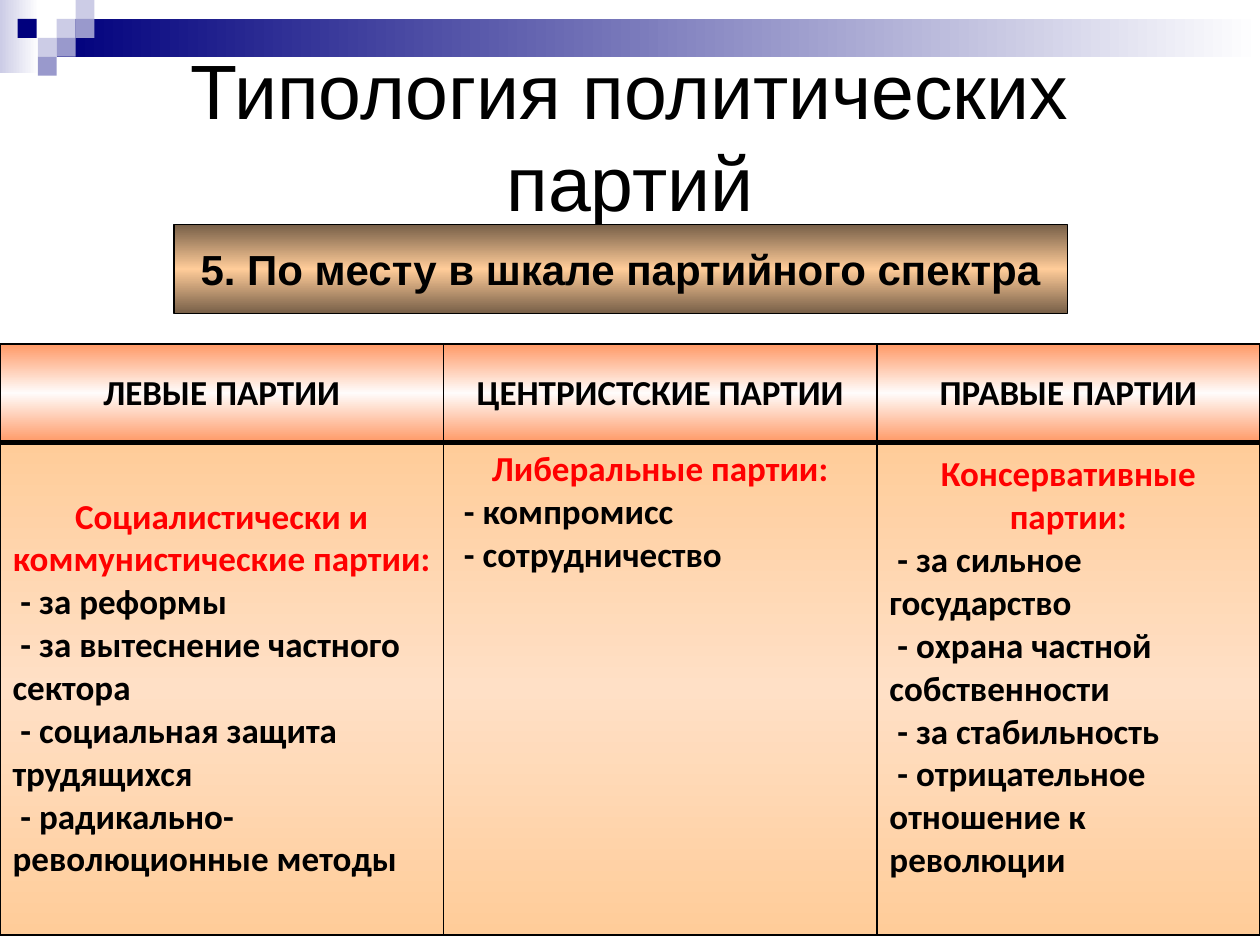
from lxml import etree
from pptx import Presentation
from pptx.dml.color import RGBColor
from pptx.enum.shapes import MSO_SHAPE
from pptx.enum.text import MSO_ANCHOR, MSO_AUTO_SIZE, PP_ALIGN
from pptx.oxml.ns import qn
from pptx.util import Inches, Pt

RECT = MSO_SHAPE.RECTANGLE
LEFT, CENTER = PP_ALIGN.LEFT, PP_ALIGN.CENTER
TOP, MIDDLE = MSO_ANCHOR.TOP, MSO_ANCHOR.MIDDLE

BLACK = RGBColor(0x00, 0x00, 0x00)
WHITE = RGBColor(0xFF, 0xFF, 0xFF)
RED = RGBColor(0xFF, 0x00, 0x00)
NAVY = RGBColor(0x00, 0x00, 0x7D)
LILAC = RGBColor(0xCC, 0xCC, 0xE6)
VIOLET = RGBColor(0x99, 0x99, 0xCC)
BROWN = RGBColor(0x76, 0x5E, 0x47)
PEACH = RGBColor(0xFF, 0xCC, 0x99)
CREAM = RGBColor(0xFF, 0xE0, 0xC6)
CORAL = RGBColor(0xFF, 0x99, 0x66)
SNOW = RGBColor(0xFF, 0xFC, 0xFB)

TITLE = "Типология политических партий"
BANNER = "5. По месту в шкале партийного спектра"
# heading, subheading, points, anchor, bottom margin
PARTIES = [
    ("ЛЕВЫЕ ПАРТИИ", "Социалистически и коммунистические партии:",
     ["за реформы", "за вытеснение частного сектора",
      "социальная защита трудящихся", "радикально-революционные методы"],
     MIDDLE, 0.05),
    ("ЦЕНТРИСТСКИЕ ПАРТИИ", "Либеральные партии:",
     ["компромисс", "сотрудничество"], TOP, 0.05),
    ("ПРАВЫЕ ПАРТИИ", "Консервативные партии:",
     ["за сильное государство", "охрана частной собственности",
      "за стабильность", "отрицательное отношение к революции"],
     MIDDLE, 0.38),
]
WIDTHS = [3.52, 3.44, 3.04]
HEIGHTS = [0.78, 3.91]

STEP = 0.15
# left, top, colour
SQUARES = [
    (0.45, STEP, LILAC), (0.6, 0, LILAC), (0.6, STEP, VIOLET),
    (0.3, 0.3, LILAC), (0.14, STEP, NAVY), (0.45, 0.3, VIOLET),
    (0.3, 0.45, VIOLET),
]


def blend(item, node, colors, angle):
    """Fill a shape or cell with evenly spaced gradient stops."""
    item.fill.gradient()
    grad = node.find(".//" + qn("a:gradFill"))
    stops = grad.find(qn("a:gsLst"))
    for stop in list(stops):
        stops.remove(stop)
    for i, color in enumerate(colors):
        pos = 100000 * i // (len(colors) - 1)
        stop = etree.SubElement(stops, qn("a:gs"), pos=str(pos))
        etree.SubElement(stop, qn("a:srgbClr"), val=str(color))
    grad.find(qn("a:lin")).set("ang", str(angle * 60000))


def write(frame, text, size=20, font="Calibri", color=BLACK, bold=True,
          align=CENTER, new=False):
    para = frame.add_paragraph() if new else frame.paragraphs[0]
    para.alignment = align
    run = para.add_run()
    run.text = text
    run.font.size, run.font.name = Pt(size), font
    run.font.bold, run.font.color.rgb = bold, color


def box(slide, left, top, width, height):
    shape = slide.shapes.add_shape(
        RECT, Inches(left), Inches(top), Inches(width), Inches(height))
    shape.shadow.inherit = False
    shape.line.fill.background()
    return shape


def border(cell, **widths):
    props = cell._tc.get_or_add_tcPr()
    for side, width in widths.items():
        line = etree.SubElement(props, qn("a:ln" + side), w=str(Pt(width)))
        fill = etree.SubElement(line, qn("a:solidFill"))
        etree.SubElement(fill, qn("a:srgbClr"), val=str(BLACK))


def decorate(slide):
    for area, color in [((0, 0, 0.31, 0.58), LILAC),
                        ((0.45, STEP, 9.55, 0.3), NAVY)]:
        shape = box(slide, *area)
        blend(shape, shape._element, [color, WHITE], 0)
    for left, top, color in SQUARES:
        shape = box(slide, left, top, STEP, STEP)
        shape.fill.solid()
        shape.fill.fore_color.rgb = color


def add_title(slide):
    title = slide.shapes.title
    title.left, title.top = Inches(0.5), Inches(0.5)
    title.width, title.height = Inches(9), Inches(1.14)
    frame = title.text_frame
    frame.auto_size = MSO_AUTO_SIZE.NONE
    frame.vertical_anchor = MIDDLE
    write(frame, TITLE, size=44, font="Arial", bold=False)
    # bring the title in front of the decoration
    slide.shapes._spTree.append(title._element)


def add_banner(slide):
    shape = box(slide, 1.38, 1.78, 7.09, 0.71)
    blend(shape, shape._element, [BROWN, PEACH, BROWN], 90)
    shape.line.color.rgb, shape.line.width = BLACK, Pt(0.75)
    frame = shape.text_frame
    frame.word_wrap = False
    frame.vertical_anchor = MIDDLE
    write(frame, BANNER, size=24, font="Arial")


def add_parties(slide):
    table = slide.shapes.add_table(
        len(HEIGHTS), len(PARTIES), 0, Inches(2.73),
        Inches(sum(WIDTHS)), Inches(sum(HEIGHTS))).table
    for row, height in zip(table.rows, HEIGHTS):
        row.height = Inches(height)
    for i, (name, kind, points, anchor, margin) in enumerate(PARTIES):
        table.columns[i].width = Inches(WIDTHS[i])
        head, body = table.cell(0, i), table.cell(1, i)
        border(head, L=1, R=1, T=1, B=3)
        border(body, L=1, R=1, T=3, B=1)
        blend(head, head._tc, [CORAL, SNOW, CORAL], 90)
        blend(body, body._tc, [PEACH, CREAM, PEACH], 90)
        head.vertical_anchor, body.vertical_anchor = MIDDLE, anchor
        body.margin_bottom = Inches(margin)
        write(head.text_frame, name)
        write(body.text_frame, kind, color=RED)
        for point in points:
            write(body.text_frame, " - " + point, align=LEFT, new=True)


def main():
    deck = Presentation()
    deck.slide_width, deck.slide_height = Inches(10), Inches(7.5)
    slide = deck.slides.add_slide(deck.slide_layouts[5])
    decorate(slide)
    add_title(slide)
    add_banner(slide)
    add_parties(slide)
    deck.save("out.pptx")


if __name__ == "__main__":
    main()
